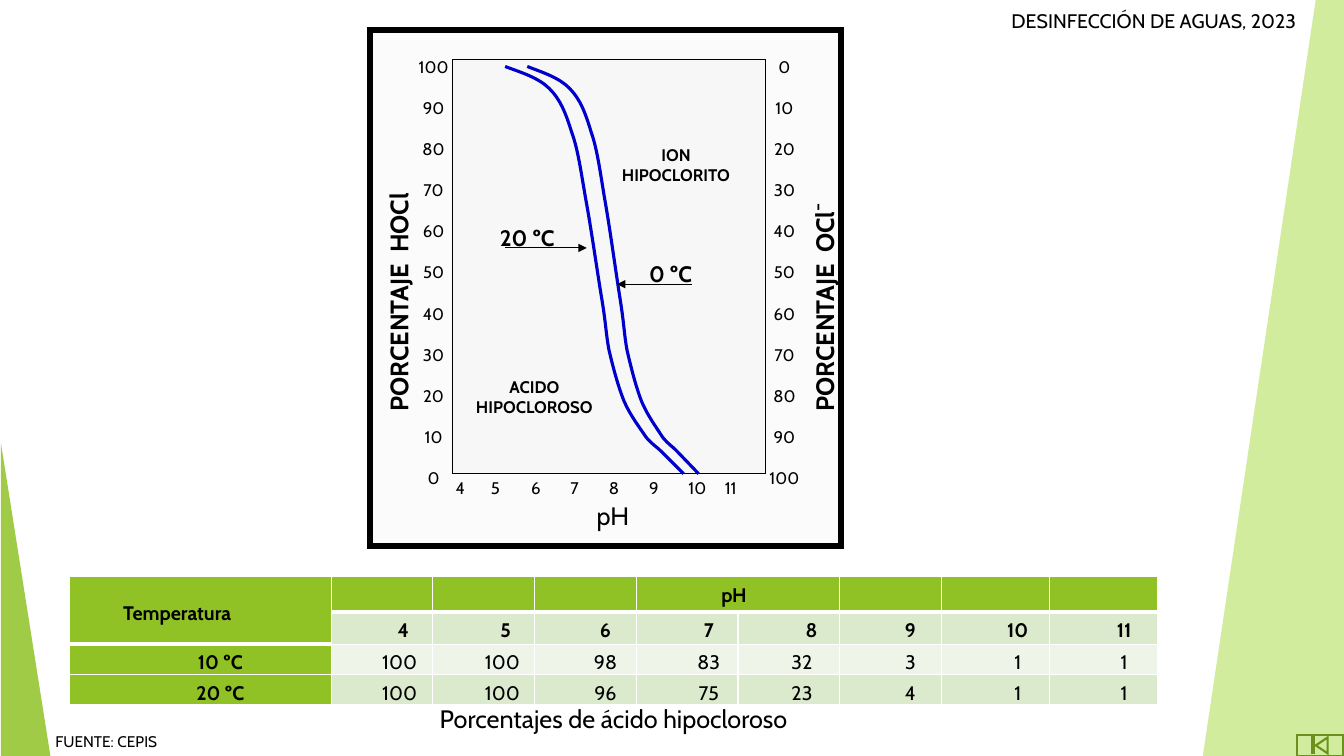
from dataclasses import dataclass
from lxml.etree import SubElement
from pptx import Presentation
from pptx.dml.color import RGBColor
from pptx.enum.shapes import MSO_CONNECTOR as Connector, MSO_SHAPE as Preset
from pptx.enum.text import MSO_ANCHOR as Anchor, PP_ALIGN as Align
from pptx.oxml.ns import qn
from pptx.util import Inches, Pt


@dataclass(frozen=True)
class Theme:
    font: str = "Cabin"
    ink: str = "000000"
    white: str = "FFFFFF"
    green: str = "90C226"
    lime: str = "C0E474"
    olive: str = "6B901C"
    card: str = "FBFBFB"
    plot: str = "F7F7F7"
    curve: str = "0000CC"
    band: str = "DBE9CD"
    pale: str = "EEF4E8"
    source: int = 11
    tick: int = 12
    cell: int = 14
    temperature: int = 16
    axis: int = 18
    ion: int = 24


THEME = Theme()
WIDTH, HEIGHT = 13.33, 7.5

HEADER = "DESINFECCIÓN DE AGUAS, 2023"
SOURCE = "FUENTE: CEPIS"
CAPTION = "Porcentajes de ácido hipocloroso"
HOCL_PERCENT = [100, 90, 80, 70, 60, 50, 40, 30, 20, 10, 0]
PH_VALUES = [4, 5, 6, 7, 8, 9, 10, 11]
PH_TABS = [0.35, 0.75, 1.14, 1.52, 1.92, 2.31, 2.67]
PH_TITLE = "pH"
REGIONS = [("ION HIPOCLORITO", 6.04, 1.39, 1.33), ("ACIDO HIPOCLOROSO", 4.56, 3.69, 1.48)]
TEMPERATURES = [("20 ºC", 4.86, 2.17, 5.01, 5.82), ("0 ºC", 6.34, 2.53, 6.86, 6.12)]
AXIS_TITLES = [("PORCENTAJE  HOCl", "", 3.94), ("PORCENTAJE  OCl", "-", 8.08)]

CURVE_KNOTS = [
    (5.01, 0.66), (5.17, 0.72), (5.34, 0.77), (5.45, 0.88), (5.56, 0.99), (5.61, 1.12), (5.67, 1.31),
    (5.74, 1.5), (5.77, 1.76), (5.82, 2.03), (5.87, 2.31), (5.93, 2.73), (5.97, 2.97),
    (6.01, 3.21), (6.01, 3.31), (6.04, 3.47), (6.08, 3.64), (6.13, 3.83), (6.19, 3.98),
    (6.25, 4.12), (6.35, 4.25), (6.41, 4.34), (6.48, 4.42), (6.5, 4.42), (6.56, 4.48),
    (6.62, 4.54), (6.7, 4.62), (6.78, 4.7),
]
CURVES = [(5.01, 1), (5.23, 0.96)]

TABLE = [
    ["Temperatura", "", "", "", "pH", "", "", "", ""],
    ["", *PH_VALUES],
    ["10 ºC", 100, 100, 98, 83, 32, 3, 1, 1],
    ["20 ºC", 100, 100, 96, 75, 23, 4, 1, 1],
]
COLUMN_WIDTHS = [2.6, 1, 1.01, 1.01, 1.01, 1.01, 1.01, 1.07, 1.07]
COLUMN_INDENTS = [0.08, 0.11, 0.13, 0.09, 0.12, 0.14, 0.08, 0.13, 0.1]
HEADING_INDENT = 0.14
LEFT_COLUMNS = (1, 2, 5)
ROW_HEIGHTS = [0.35, 0.32, 0.3, 0.3]
ROW_FILLS = [THEME.green, THEME.band, THEME.pale, THEME.band]

deck = Presentation()
deck.slide_width, deck.slide_height = Inches(WIDTH), Inches(HEIGHT)
slide = deck.slides.add_slide(deck.slide_layouts[6])
shapes = slide.shapes


def write(paragraph, text, size=THEME.tick, bold=False, align=Align.LEFT, raised=""):
    paragraph.alignment = align
    for part, points in ((str(text), size), (raised, THEME.ion)):
        if part:
            run = paragraph.add_run()
            run.text = part
            run.font.name, run.font.size, run.font.bold = THEME.font, Pt(points), bold
            run.font.color.rgb = RGBColor.from_string(THEME.ink)
            if part == raised:
                run.font._element.set("baseline", "30000")


def label(lines, left, top, width, height, turn=0, gap=0, **style):
    box = shapes.add_textbox(*map(Inches, (left, top, width, height)))
    box.rotation = turn
    frame = box.text_frame
    frame.word_wrap = True
    for index, line in enumerate(lines):
        paragraph = frame.add_paragraph() if index else frame.paragraphs[0]
        paragraph.space_before = Pt(gap if index else 0)
        write(paragraph, line, **style)
    return frame


def paint(shape, fill=None, line=None, weight=0.75, opacity=100):
    shape.shadow.inherit = False
    if fill:
        shape.fill.solid()
        shape.fill.fore_color.rgb = RGBColor.from_string(fill)
        if opacity < 100:
            color = shape.fill._xPr.find(qn("a:solidFill"))[0]
            SubElement(color, qn("a:alpha"), val=str(opacity * 1000))
    else:
        shape.fill.background()
    if line:
        shape.line.color.rgb = RGBColor.from_string(line)
        shape.line.width = Pt(weight)
        SubElement(shape.line._get_or_add_ln(), qn("a:miter"), lim="800000")
    else:
        shape.line.fill.background()


def preset(kind, left, top, width, height, **look):
    shape = shapes.add_shape(kind, *map(Inches, (left, top, width, height)))
    paint(shape, **look)
    return shape


def outline(points, close, **look):
    start, *rest = [(Inches(x), Inches(y)) for x, y in points]
    builder = shapes.build_freeform(*start)
    builder.add_line_segments(rest, close=close)
    shape = builder.convert_to_shape()
    paint(shape, **look)
    return shape


def bend(shape):
    segments = list(shape._element.iter(qn("a:lnTo")))
    track = segments[0].getparent()
    for first in range(0, len(segments), 3):
        curve = SubElement(track, qn("a:cubicBezTo"))
        for segment in segments[first:first + 3]:
            curve.append(segment[0])
            track.remove(segment)


def arrow(start, end, y):
    line = shapes.add_connector(Connector.STRAIGHT, *map(Inches, (start, y, end, y)))
    line.line.color.rgb = RGBColor.from_string(THEME.ink)
    line.line.width = Pt(0.75)
    SubElement(line.line._get_or_add_ln(), qn("a:tailEnd"), type="triangle")
    SubElement(line._element.spPr, qn("a:effectLst"))


def draw_frame():
    outline([(13.05, 0), (WIDTH, 0), (WIDTH, HEIGHT), (11.93, HEIGHT)], True, fill=THEME.lime, opacity=70)
    wedge = preset(Preset.ISOSCELES_TRIANGLE, 0.01, 4.4, 0.49, 3.1, fill=THEME.green, opacity=85)
    wedge.adjustments[0] = 0
    preset(Preset.ACTION_BUTTON_BEGINNING, 12.86, 7.29, 0.46, 0.21, line=THEME.olive, weight=1.5)
    label([HEADER], 9.77, 0.04, 3.35, 0.34, size=THEME.cell, align=Align.CENTER)


def draw_plot():
    preset(Preset.RECTANGLE, 3.67, 0.3, 4.67, 5.12, fill=THEME.card, line=THEME.ink, weight=4.5)
    preset(Preset.RECTANGLE, 4.49, 0.59, 3.1, 4.11, fill=THEME.plot, line=THEME.ink)
    origin = CURVE_KNOTS[0][0]
    for left, stretch in CURVES:
        knots = [(left + (x - origin) * stretch, y) for x, y in CURVE_KNOTS]
        bend(outline(knots, False, line=THEME.curve, weight=2.25))
    for text, left, top, start, end in TEMPERATURES:
        label([text], left, top, 0.81, 0.34, size=THEME.temperature, bold=True)
        arrow(start, end, top + 0.29)
    for text, left, top, width in REGIONS:
        label([text], left, top, width, 0.46, bold=True, align=Align.CENTER)
    for percents, left in ((HOCL_PERCENT, 4.04), (HOCL_PERCENT[::-1], 7.52)):
        label(percents, left, 0.51, 0.52, 4.26, gap=15, align=Align.CENTER)
    scale = label(["\t".join(map(str, PH_VALUES))], 4.42, 4.69, 3.7, 0.27)
    stops = SubElement(scale.paragraphs[0]._p.get_or_add_pPr(), qn("a:tabLst"))
    for position in PH_TABS:
        SubElement(stops, qn("a:tab"), pos=str(Inches(position)), algn="l")
    label([PH_TITLE], 5.82, 4.91, 0.59, 0.4, size=THEME.axis)
    for text, charge, center in AXIS_TITLES:
        label([text], center - 1.55, 2.44, 3.1, 0.38, turn=270, size=THEME.axis, bold=True, raised=charge)


def border(cell, bottom):
    properties = cell._tc.get_or_add_tcPr()
    for side, weight in (("L", 1), ("R", 1), ("T", 1), ("B", bottom)):
        line = SubElement(properties, qn("a:ln" + side), w=str(Pt(weight)))
        SubElement(SubElement(line, qn("a:solidFill")), qn("a:srgbClr"), val=THEME.white)


def draw_table():
    size = map(Inches, (0.69, 5.72, sum(COLUMN_WIDTHS), sum(ROW_HEIGHTS)))
    grid = shapes.add_table(len(TABLE), len(COLUMN_WIDTHS), *size).table
    for column, width in zip(grid.columns, COLUMN_WIDTHS):
        column.width = Inches(width)
    for r, (values, height) in enumerate(zip(TABLE, ROW_HEIGHTS)):
        grid.rows[r].height = Inches(height)
        for c, value in enumerate(values):
            cell = grid.cell(r, c)
            border(cell, 3 if r == 0 else 1)
            cell.fill.solid()
            cell.fill.fore_color.rgb = RGBColor.from_string(THEME.green if c == 0 else ROW_FILLS[r])
            cell.margin_left, cell.margin_top = 0, Inches(0.05)
            cell.margin_right, cell.margin_bottom = Inches(0.08), 0
            flush = (r == 0 and c == 0) or (r > 1 and c in LEFT_COLUMNS)
            paragraph = cell.text_frame.paragraphs[0]
            align = Align.LEFT if flush else Align.CENTER
            write(paragraph, value, size=THEME.cell, bold=r < 2 or c == 0, align=align)
            paragraph.line_spacing = 1.07
            if value != PH_TITLE:
                properties = paragraph._p.get_or_add_pPr()
                properties.set("marL", str(Inches(COLUMN_INDENTS[c] if r else HEADING_INDENT)))
                properties.set("indent", str(Inches(0.39)))
    grid.cell(0, 0).merge(grid.cell(1, 0))
    grid.cell(0, 0).vertical_anchor = Anchor.MIDDLE
    grid.cell(0, 4).merge(grid.cell(0, 5))


draw_frame()
draw_plot()
draw_table()
label([SOURCE], 0.45, 7.21, 2.68, 0.29, size=THEME.source)
label([CAPTION], 0.69, 6.93, 10.79, 0.4, size=THEME.axis, align=Align.CENTER)
deck.save("out.pptx")
